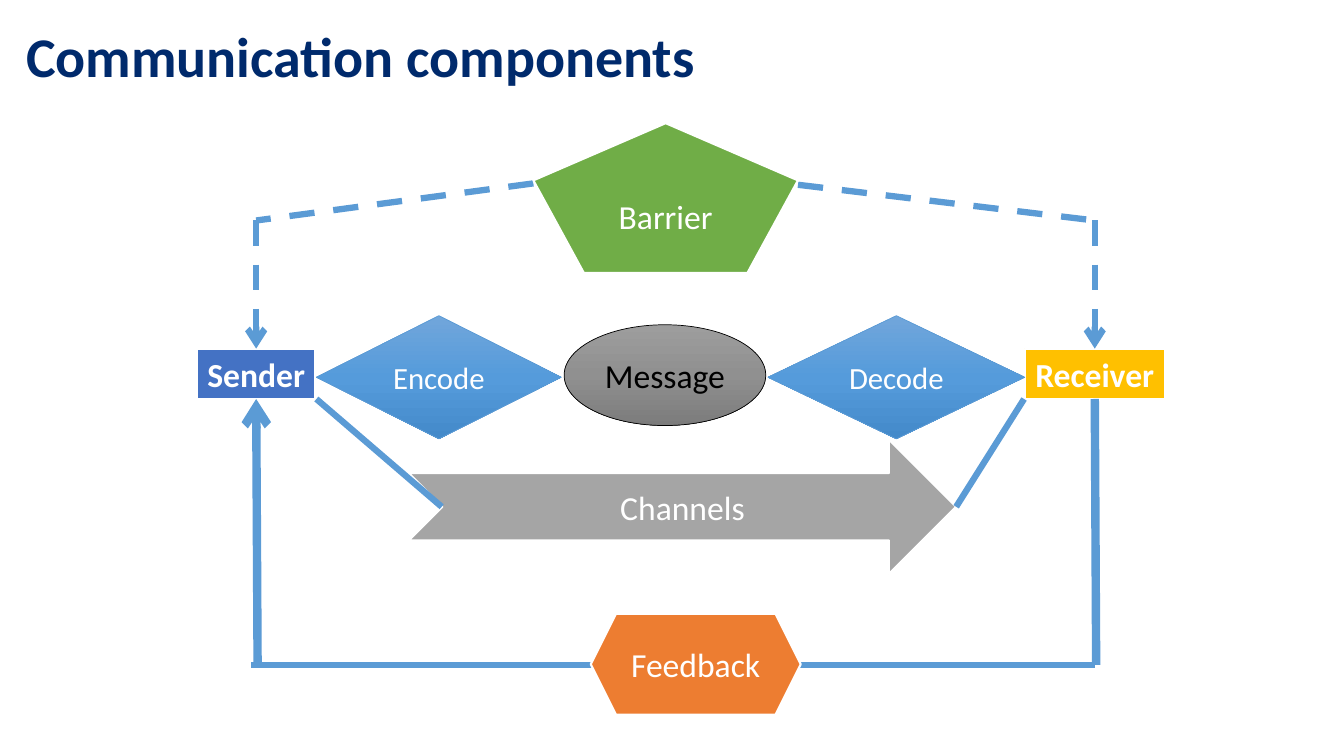
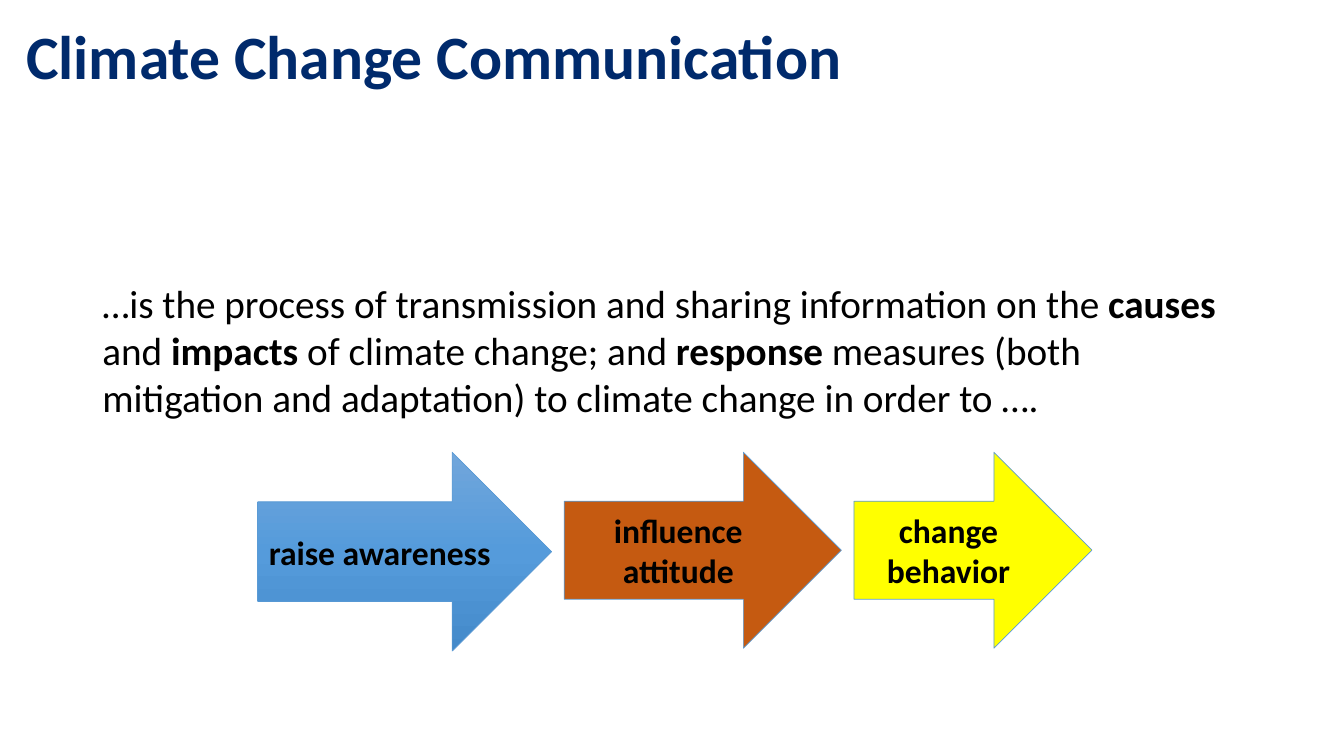
import copy

import pptx
import pptx.dml.color
import pptx.enum.dml
import pptx.enum.shapes
import pptx.enum.text
import pptx.oxml.ns
import pptx.oxml.xmlchemy
import pptx.util

Pt = pptx.util.Pt
SHAPE = pptx.enum.shapes.MSO_SHAPE
ALIGN = pptx.enum.text.PP_ALIGN
ANCHOR = pptx.enum.text.MSO_ANCHOR
qn = pptx.oxml.ns.qn

FONT = "Calibri"
COLORS = {
    "navy": "002A6C", "black": "000000", "white": "FFFFFF",
    "sky": "5B9BD5", "royal": "4472C4", "gold": "FFC000",
    "green": "70AD47", "gray": "A5A5A5", "orange": "ED7D31",
    "rust": "C55A11", "yellow": "FFFF00",
}
GRADIENTS = {
    "blue shade": ("71A6DB", "559BDB", "448ACA"),
    "gray shade": ("9D9D9D", "909090", "7C7C7C"),
}
TOP, BOTTOM = 0, 2


def rgb(color):
    return pptx.dml.color.RGBColor.from_string(COLORS.get(color, color))


def write(paragraph, text, size=24, color="white", bold=False, align=ALIGN.CENTER):
    """Add one formatted run to the paragraph."""
    paragraph.alignment = align
    run = paragraph.add_run()
    run.text = text
    run.font.name = FONT
    run.font.size = Pt(size)
    run.font.bold = bold
    run.font.color.rgb = rgb(color)


def fill_shape(shape, fill):
    """Fill with a plain colour or with a three-stop gradient from top to bottom."""
    if fill not in GRADIENTS:
        shape.fill.solid()
        shape.fill.fore_color.rgb = rgb(fill)
        return
    shape.fill.gradient()
    shape.fill.gradient_angle = 270
    stop_list = shape._element.spPr.find(".//" + qn("a:gsLst"))
    stop_list.append(copy.deepcopy(stop_list[0]))
    for stop, color, position in zip(shape.fill.gradient_stops, GRADIENTS[fill], (0, 0.5, 1)):
        stop.color.rgb = rgb(color)
        stop.position = position


def add_part(slide, kind, box, label, fill, outline="white", weight=1.5, wrap=True, **text_format):
    """Add a labelled shape; box is left, top, width, height."""
    part = slide.shapes.add_shape(kind, *map(Pt, box))
    part.shadow.inherit = False
    fill_shape(part, fill)
    part.line.color.rgb = rgb(outline)
    part.line.width = Pt(weight)
    part.text_frame.word_wrap = wrap
    part.text_frame.vertical_anchor = ANCHOR.MIDDLE
    write(part.text_frame.paragraphs[0], label, **text_format)
    return part


def add_line(slide, start, end, weight=4.5, dashed=False, arrow=False):
    line = slide.shapes.add_connector(
        pptx.enum.shapes.MSO_CONNECTOR.STRAIGHT, *map(Pt, start + end))
    line.line.color.rgb = rgb("sky")
    line.line.width = Pt(weight)
    if dashed:
        line.line.dash_style = pptx.enum.dml.MSO_LINE.DASH
    if arrow:
        tail = pptx.oxml.xmlchemy.OxmlElement("a:tailEnd")
        tail.set("type", "arrow")
        line.line._get_or_add_ln().append(tail)
    line._element.spPr.append(pptx.oxml.xmlchemy.OxmlElement("a:effectLst"))
    return line


def add_titled_slide(deck, title, size):
    slide = deck.slides.add_slide(deck.slide_layouts[5])
    heading = slide.shapes.title
    heading.left, heading.top, heading.width, heading.height = map(Pt, (11.5, 0, 935, 85))
    frame = heading.text_frame
    frame.auto_size = pptx.enum.text.MSO_AUTO_SIZE.NONE
    frame.vertical_anchor = ANCHOR.MIDDLE
    frame.paragraphs[0].line_spacing = 0.9
    write(frame.paragraphs[0], title, size, "navy", bold=True, align=ALIGN.LEFT)
    return slide


def build_components(deck):
    slide = add_titled_slide(deck, "Communication components", 40)
    sender_x, receiver_x = 183, 782
    top, bottom = 249, 285
    barrier_y, feedback_y, channel_y = 157.5, 475, 362

    sender = add_part(slide, SHAPE.RECTANGLE, (141, top, 84, 36), "Sender", "royal",
                      wrap=False, bold=True)
    receiver = add_part(slide, SHAPE.RECTANGLE, (732, top, 100, 36), "Receiver", "gold",
                        wrap=False, bold=True)

    for person, x, barrier_corner in ((sender, sender_x, (381, 131)),
                                      (receiver, receiver_x, (570, 132))):
        add_line(slide, barrier_corner, (x, barrier_y), dashed=True)
        drop = add_line(slide, (x, barrier_y), (x, top), dashed=True, arrow=True)
        drop.end_connect(person, TOP)

    reply = add_line(slide, (receiver_x, bottom), (receiver_x + 1, feedback_y), weight=6)
    reply.begin_connect(receiver, BOTTOM)
    add_line(slide, (receiver_x, feedback_y), (535, feedback_y))
    add_line(slide, (425, feedback_y), (179, feedback_y))
    answer = add_line(slide, (sender_x + 1, feedback_y), (sender_x, bottom), weight=6, arrow=True)
    answer.end_connect(sender, BOTTOM)

    add_part(slide, SHAPE.OVAL, (403, 232, 144, 72), "Message", "gray shade",
             outline="black", weight=0.5, color="black")
    for label, left, width in (("Encode", 226, 175), ("Decode", 548.5, 183.5)):
        add_part(slide, SHAPE.DIAMOND, (left, 225.5, width, 88), label, "blue shade",
                 outline="sky", weight=0.5, size=22)
    add_part(slide, SHAPE.REGULAR_PENTAGON, (381, 88, 189, 107), "Barrier", "green")
    add_part(slide, SHAPE.NOTCHED_RIGHT_ARROW, (292, 314, 391, 96), "Channels", "gray")
    add_part(slide, SHAPE.HEXAGON, (422, 438.5, 150, 72), "Feedback", "orange")

    add_line(slide, (226, bottom), (315.5, channel_y))
    add_line(slide, (683, channel_y), (731.5, bottom))


def build_climate(deck):
    slide = add_titled_slide(deck, "Climate Change Communication", 44)
    definition = slide.shapes.add_textbox(*map(Pt, (66, 196, 828, 110))).text_frame
    definition.word_wrap = True
    for text, bold in (
        ("…is the process of transmission and sharing information on the ", False),
        ("causes", True),
        (" and ", False),
        ("impacts", True),
        (" of climate change; and ", False),
        ("response", True),
        (" measures (both mitigation and adaptation) to climate change in order to ….", False),
    ):
        write(definition.paragraphs[0], text, 28, "black", bold, ALIGN.LEFT)

    left, gap = 184, 9
    for goal, fill, width, height in (
        ("raise awareness", "blue shade", 210, 142),
        ("influence attitude", "rust", 198, 140),
        ("change behavior", "yellow", 170, 140),
    ):
        add_part(slide, SHAPE.RIGHT_ARROW, (left, 323, width, height), goal, fill,
                 outline="sky", weight=0.5, color="black", bold=True)
        left += width + gap


def main():
    deck = pptx.Presentation()
    deck.slide_width, deck.slide_height = Pt(960), Pt(540)
    build_components(deck)
    build_climate(deck)
    deck.save("out.pptx")


if __name__ == "__main__":
    main()
